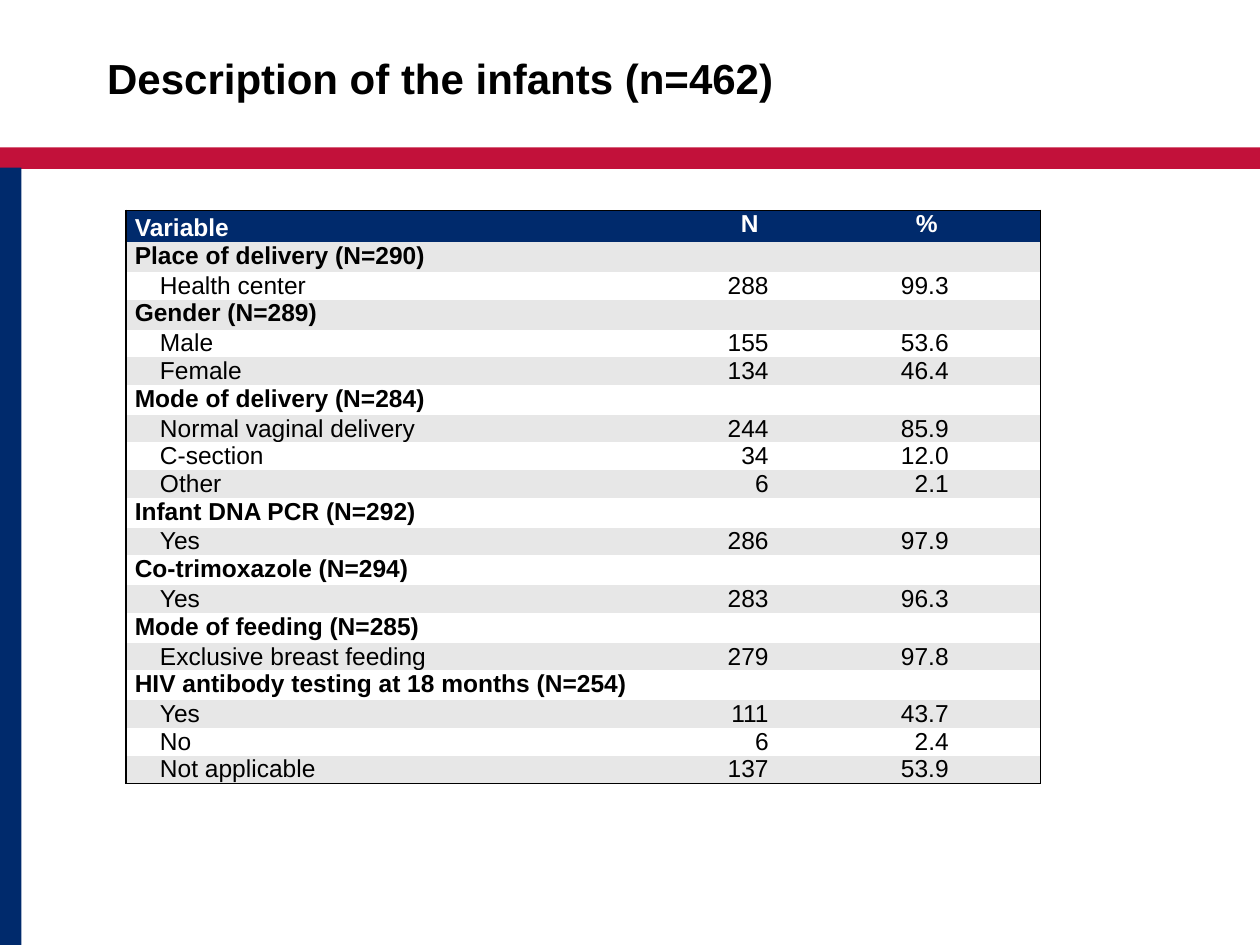
import pptx
import pptx.util
import pptx.dml.color
import pptx.enum.shapes
import pptx.enum.text
from lxml import etree
from pptx.oxml.ns import qn

Inches, Pt = pptx.util.Inches, pptx.util.Pt
Align = pptx.enum.text.PP_ALIGN

COLORS = {"red": "C2113A", "navy": "002A6C", "gray": "E7E7E7",
          "white": "FFFFFF", "black": "000000"}
HEAD = ("Variable", "N", "%")
GROUPS = [
    ("Place of delivery (N=290)", [("Health center", "288", "99.3")]),
    ("Gender (N=289)", [("Male", "155", "53.6"), ("Female", "134", "46.4")]),
    ("Mode of delivery (N=284)", [("Normal vaginal delivery", "244", "85.9"),
                                  ("C-section", "34", "12.0"),
                                  ("Other", "6", "2.1")]),
    ("Infant DNA PCR (N=292)", [("Yes", "286", "97.9")]),
    ("Co-trimoxazole (N=294)", [("Yes", "283", "96.3")]),
    ("Mode of feeding (N=285)", [("Exclusive breast feeding", "279", "97.8")]),
    ("HIV antibody testing at 18 months (N=254)", [("Yes", "111", "43.7"),
                                                   ("No", "6", "2.4"),
                                                   ("Not applicable", "137", "53.9")]),
]
WIDTHS = (4.45, 1, 1.81)
PADS = (0.07, 0.35, 0.73)  # right margins that line up the digits


def rgb(name):
    return pptx.dml.color.RGBColor.from_string(COLORS[name])


def write(para, text, size, color, bold):
    run = para.add_run()
    run.text = text
    run.font.name = "Arial"
    run.font.size = Pt(size)
    run.font.bold = bold
    run.font.color.rgb = rgb(color)


deck = pptx.Presentation()
deck.slide_width, deck.slide_height = Inches(10), Inches(7.5)
slide = deck.slides.add_slide(deck.slide_layouts[5])

# Red and navy bands
for color, *box in (("red", 0, 1.17, 10, 0.17), ("navy", 0, 1.33, 0.17, 6.17)):
    band = slide.shapes.add_shape(pptx.enum.shapes.MSO_SHAPE.RECTANGLE,
                                  *[Inches(v) for v in box])
    band.shadow.inherit = False
    band.fill.solid()
    band.fill.fore_color.rgb = rgb(color)
    band.line.fill.background()

# Title
title = slide.shapes.title
title.left, title.top = Inches(0.75), Inches(0.33)
title.width, title.height = Inches(8.5), Inches(0.67)
frame = title.text_frame
frame.vertical_anchor = pptx.enum.text.MSO_ANCHOR.TOP
frame.margin_top = Inches(0.09)
frame.paragraphs[0].alignment = Align.LEFT
write(frame.paragraphs[0], "Description of the infants (n=462)", 24, "black", True)

# Table rows: (kind, texts)
rows = [("head", HEAD)]
for name, items in GROUPS:
    rows.append(("group", (name, "", "")))
    rows += [("item", item) for item in items]

holder = slide.shapes.add_table(len(rows), len(WIDTHS), Inches(1), Inches(1.67),
                                Inches(sum(WIDTHS)), Inches(0.22 * len(rows)))
table = holder.table
table.first_row = table.horz_banding = False
style = next(holder.element.iter(qn("a:tableStyleId")))
style.text = "{2D5ABB26-0587-4C30-8999-92F81FD0307C}"  # no style, no grid
for col, width in zip(table.columns, WIDTHS):
    col.width = Inches(width)

last_row, last_col = len(rows) - 1, len(WIDTHS) - 1
for r, (kind, texts) in enumerate(rows):
    table.rows[r].height = Inches(0.25 if kind == "head" else 0.22)
    for c, text in enumerate(texts):
        cell = table.cell(r, c)
        cell.margin_top = cell.margin_bottom = 0
        cell.margin_left = cell.margin_right = Inches(0.07)

        # Outer border only; lines go before the fill
        props = cell._tc.get_or_add_tcPr()
        edges = (("a:lnL", c == 0), ("a:lnR", c == last_col),
                 ("a:lnT", r == 0), ("a:lnB", r == last_row))
        for tag, outer in edges:
            if outer:
                line = etree.SubElement(props, qn(tag), w=str(Pt(1)))
                paint = etree.SubElement(line, qn("a:solidFill"))
                etree.SubElement(paint, qn("a:srgbClr"), val=COLORS["black"])
        cell.fill.solid()
        band = "gray" if r % 2 else "white"
        cell.fill.fore_color.rgb = rgb("navy" if kind == "head" else band)

        para = cell.text_frame.paragraphs[0]
        if kind == "head":
            if c == 0:
                para.line_spacing = 1.15
            else:
                para.alignment = Align.CENTER
        elif c > 0:
            para.alignment = Align.RIGHT
            cell.margin_right = Inches(PADS[c])
        elif kind == "item":
            para._p.get_or_add_pPr().set("marL", str(Inches(0.2)))
        if text:
            write(para, text, 14, "white" if kind == "head" else "black", kind != "item")
        else:
            etree.SubElement(para._p, qn("a:endParaRPr"), sz="1400")

deck.save("out.pptx")
